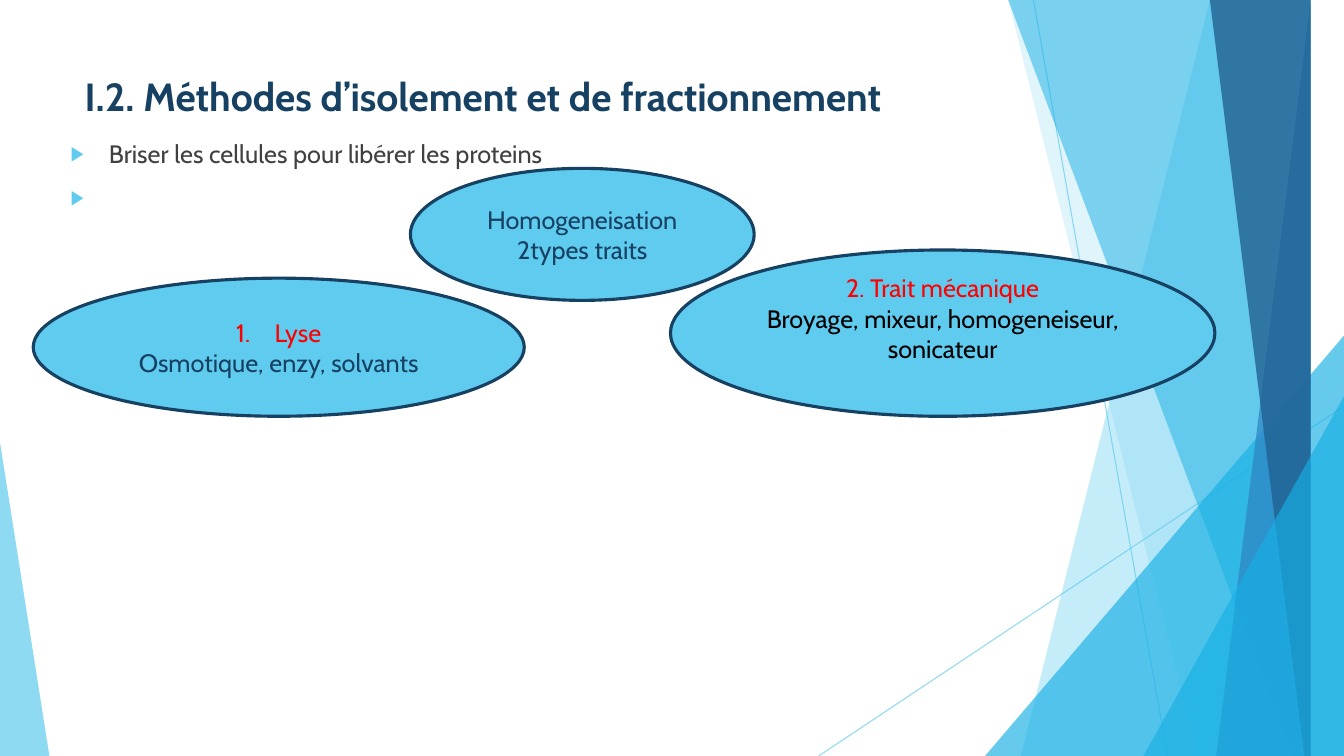
from lxml.etree import SubElement
from pptx import Presentation
from pptx.dml.color import RGBColor
from pptx.enum.shapes import MSO_CONNECTOR, MSO_SHAPE
from pptx.enum.text import MSO_ANCHOR, MSO_AUTO_SIZE, PP_ALIGN
from pptx.oxml.ns import qn
from pptx.util import Inches, Pt

WIDTH, HEIGHT = 13.33, 7.5
FONT = "Cabin"
SKY = RGBColor(0x5F, 0xCB, 0xEF)
CYAN = RGBColor(0x17, 0xB0, 0xE4)
BLUE = RGBColor(0x2E, 0x83, 0xC3)
STEEL = RGBColor(0x22, 0x62, 0x92)
NAVY = RGBColor(0x17, 0x41, 0x62)
GREY = RGBColor(0x40, 0x40, 0x40)
RED = RGBColor(0xFF, 0, 0)
BLACK = RGBColor(0, 0, 0)

# Content
TITLE = "I.2. Méthodes d’isolement et de fractionnement"
BULLETS = ["Briser les cellules pour libérer les proteins", " "]
TITLE_BOX = (0.74, 0.67, 9.4, 0.75)
BULLETS_BOX = (0.6, 1.32, 9.4, 4.24)
HANGING = 0.38

# Ellipses: box, numbered first line, bottom inset, lines with colours
METHODS = [
    ((0.33, 2.76, 4.87, 1.37), True, 0.05,
     [("Lyse", RED), ("Osmotique, enzy, solvants", NAVY)]),
    ((4.07, 1.67, 3.41, 1.31), False, 0.05,
     [("Homogeneisation", NAVY), ("2types traits", NAVY)]),
    ((6.65, 2.48, 5.4, 1.65), False, 0.35,
     [("2. Trait mécanique", RED),
      ("Broyage, mixeur, homogeneiseur, sonicateur", BLACK)]),
]

# Background: rays (from, to), then panels and corners from back to front
RAYS = [((10.25, 0), (11.58, HEIGHT)), ((WIDTH, 4.03), (8.12, HEIGHT))]
# panel: left edge at top and bottom; corner: left, width, height, apex share
FACETS = [
    ("panel", (12.28, 10.04), SKY, 36),
    ("panel", (10.5, 11.83), SKY, 20),
    ("corner", (9.77, 3.56, 4.17, 1), CYAN, 66),
    ("panel", (10.21, 12.91), CYAN, 50),
    ("panel", (13.03, 11.92), BLUE, 70),
    ("panel", (11.96, 13.18), STEEL, 80),
    ("corner", (11.34, 1.99, 3.57, 1), CYAN, 66),
    ("corner", (0, 0.49, 3.11, 0), SKY, 70),
]


def inches(box):
    return [Inches(length) for length in box]


def set_alpha(element, percent):
    colour = next(element.iter(qn("a:srgbClr")))
    SubElement(colour, qn("a:alpha")).set("val", str(percent * 1000))


def style_runs(paragraph, size, colour, bold=False):
    for run in paragraph.runs:
        run.font.name, run.font.size, run.font.bold = FONT, Pt(size), bold
        run.font.color.rgb = colour


def hang(paragraph):
    props = paragraph._p.get_or_add_pPr()
    props.set("marL", str(Inches(HANGING)))
    props.set("indent", str(-Inches(HANGING)))
    return props


def place(placeholder, box):
    placeholder.left, placeholder.top, placeholder.width, placeholder.height = inches(box)
    frame = placeholder.text_frame
    frame.auto_size = MSO_AUTO_SIZE.NONE
    frame.vertical_anchor = MSO_ANCHOR.TOP
    return frame


def draw_background(shapes):
    for start, end in RAYS:
        ray = shapes.add_connector(MSO_CONNECTOR.STRAIGHT, *inches(start + end))
        ray.line.color.rgb, ray.line.width = SKY, Pt(0.75)
        properties = ray._element.spPr
        set_alpha(properties, 70)
        SubElement(properties, qn("a:effectLst"))
    for kind, geometry, colour, alpha in FACETS:
        if kind == "panel":
            top, bottom = geometry
            outline = shapes.build_freeform(top, 0, scale=Inches(1))
            outline.add_line_segments([(WIDTH, 0), (WIDTH, HEIGHT), (bottom, HEIGHT)])
            facet = outline.convert_to_shape()
        else:
            left, width, height, apex = geometry
            facet = shapes.add_shape(MSO_SHAPE.ISOSCELES_TRIANGLE,
                                     *inches((left, HEIGHT - height, width, height)))
            facet.adjustments[0] = apex
        facet.shadow.inherit = False
        facet.fill.solid()
        facet.fill.fore_color.rgb = colour
        facet.line.fill.background()
        set_alpha(facet._element.spPr, alpha)


def write_placeholders(title, body):
    frame = place(title, TITLE_BOX)
    frame.text = TITLE
    frame.paragraphs[0].alignment = PP_ALIGN.LEFT
    style_runs(frame.paragraphs[0], 28, NAVY, bold=True)

    frame = place(body, BULLETS_BOX)
    frame.text = "\n".join(BULLETS)
    for bullet in frame.paragraphs:
        bullet.space_before = Pt(10)
        style_runs(bullet, 18, GREY)
        props = hang(bullet)
        tint = SubElement(SubElement(props, qn("a:buClr")), qn("a:srgbClr"))
        tint.set("val", str(SKY))
        SubElement(props, qn("a:buSzPct")).set("val", "80000")
        SubElement(props, qn("a:buChar")).set("char", "▶")


def draw_methods(shapes):
    for box, numbered, inset, lines in METHODS:
        method = shapes.add_shape(MSO_SHAPE.OVAL, *inches(box))
        method.shadow.inherit = False
        method.fill.solid()
        method.fill.fore_color.rgb = SKY
        method.line.color.rgb, method.line.width = NAVY, Pt(2.25)
        frame = method.text_frame
        frame.word_wrap = True
        frame.vertical_anchor = MSO_ANCHOR.MIDDLE
        frame.margin_bottom = Inches(inset)
        frame.text = "\n".join(text for text, _ in lines)
        for paragraph, (_, colour) in zip(frame.paragraphs, lines):
            paragraph.alignment = PP_ALIGN.CENTER
            style_runs(paragraph, 18, colour)
        if numbered:
            props = hang(frame.paragraphs[0])
            SubElement(props, qn("a:buFont")).set("typeface", FONT)
            SubElement(props, qn("a:buAutoNum")).set("type", "arabicPeriod")


def main():
    deck = Presentation()
    deck.slide_width, deck.slide_height = inches((WIDTH, HEIGHT))
    slide = deck.slides.add_slide(deck.slide_layouts[1])
    title, body = slide.placeholders
    draw_background(slide.shapes)
    # Bring the text in front of the background
    for placeholder in (title, body):
        slide.shapes._spTree.append(placeholder._element)
    write_placeholders(title, body)
    draw_methods(slide.shapes)
    deck.save("out.pptx")


if __name__ == "__main__":
    main()
